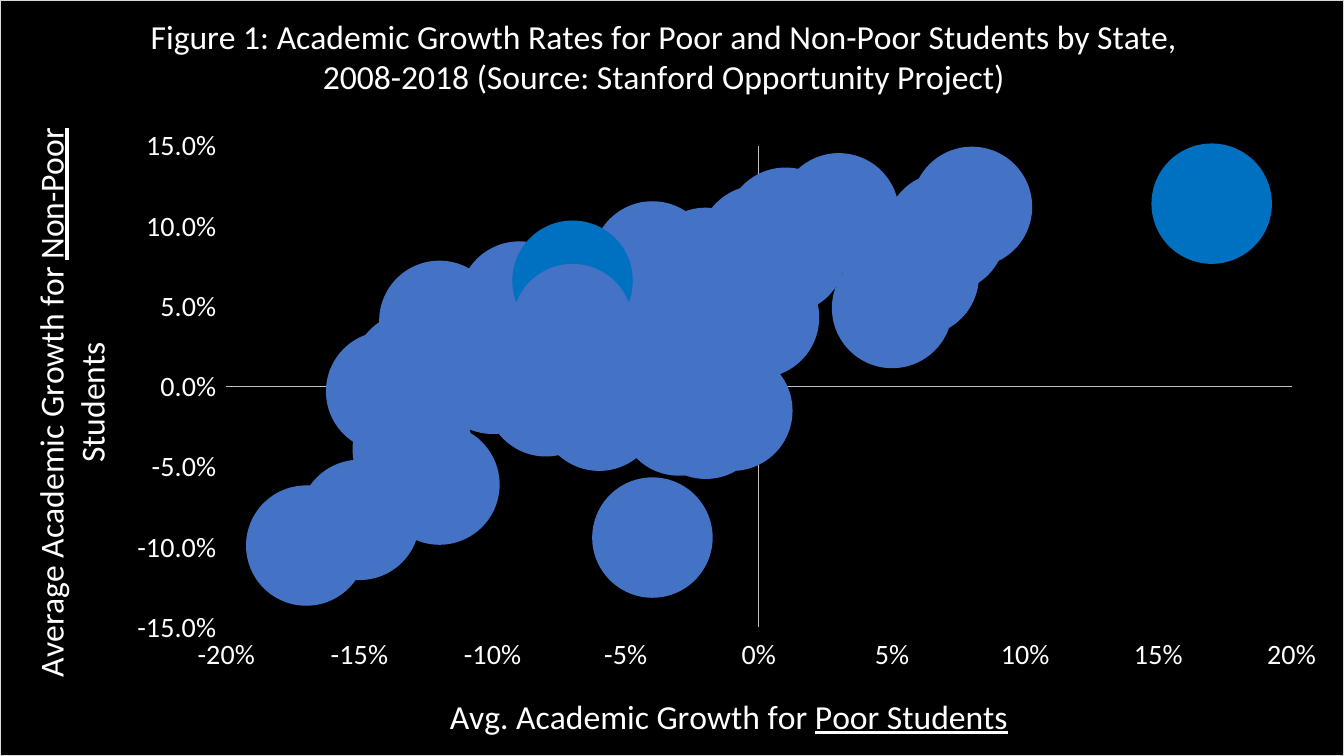
from lxml.etree import SubElement, fromstring
from pptx import Presentation
from pptx.chart.data import BubbleChartData
from pptx.dml.color import RGBColor
from pptx.enum.chart import XL_CHART_TYPE, XL_TICK_LABEL_POSITION, XL_TICK_MARK
from pptx.oxml.ns import nsdecls, qn
from pptx.util import Pt

COLORS = {"back": "000000", "text": "FFFFFF", "axis": "BFBFBF",
          "edge": "D9D9D9", "state": "4472C4", "mark": "0070C0"}
WIDE, HIGH = 960, 540
MARKED = (2, 34)

# Growth of poor students, in percent, one per state
POOR = [-4, 8, 17, -12, 1, -8, -5, -17, -15, -4,
        -2, 1, 5, -4, -6, -9, -10, -6, -9, -14,
        -9, -1, -4, -4, -6, -1, -2, -2, -12, -4,
        -2, -9, -2, -12, -7, -7, 7, -7, -13, -3,
        1, -1, 0, 3, -2, -13, 1, -6, 0, 6]
# Growth of non-poor students, in percent, same order
OTHER = [-9.4, 11.2, 11.4, -6.1, 9.9, -0.6, 2.8, -9.9, -8.3, 7.8,
         -1.6, 8.3, 4.9, 6, 4.8, 1.6, 0.8, 0.2, 3.7, -0.3,
         3.2, 7.6, 4.9, 5.7, 2, 6, 7.4, 2.7, 3.1, 3.9,
         -2, 5.3, 6, 4.1, 6.6, 2.8, 9.6, 3.9, 0.9, -1.8,
         8.3, -1.5, 4.3, 10.8, 6.6, -3.9, 9.1, -1.5, 8.8, 6.9]


def place(owner, **spots):
    """Fix the layout of a title or plot area, in points on the slide."""
    layout = owner.find(qn("c:layout"))
    if layout is None:
        layout = fromstring(f"<c:layout {nsdecls('c')}/>")
        owner.insert(0, layout)
    manual = SubElement(layout, qn("c:manualLayout"))
    if "w" in spots:
        SubElement(manual, qn("c:layoutTarget")).set("val", "inner")
    for key in ("x", "y"):
        SubElement(manual, qn(f"c:{key}Mode")).set("val", "edge")
    for key, spot in spots.items():
        full = WIDE if key in "xw" else HIGH
        SubElement(manual, qn(f"c:{key}")).set("val", str(round(spot / full, 4)))


def label(title, plain, lined, x, y):
    """Write a title from a plain part and further (text, underline) parts."""
    para = title.text_frame.paragraphs[0]
    for text, under in ((plain, False), *lined):
        run = para.add_run()
        run.text = text
        run.font.size = Pt(24)
        run.font.bold = False
        run.font.underline = under
        run.font.color.rgb = RGBColor.from_string(COLORS["text"])
    place(title._element, x=x, y=y)


deck = Presentation()
deck.slide_width, deck.slide_height = Pt(WIDE), Pt(HIGH)
slide = deck.slides.add_slide(deck.slide_layouts[6])

data = BubbleChartData()
states = data.add_series("Series 1")
for poor, other in zip(POOR, OTHER):
    states.add_data_point(poor / 100, round(other / 100, 3), 1)
chart = slide.shapes.add_chart(XL_CHART_TYPE.BUBBLE, 0, 0, Pt(WIDE), Pt(HIGH), data).chart
chart.has_legend = False
chart.font.name = "Calibri"
chart.font.size = Pt(10)

# Black ground with a thin edge
space = chart._chartSpace
space.find(qn("c:txPr")).addprevious(fromstring(
    f'<c:spPr {nsdecls("c", "a")}>'
    f'<a:solidFill><a:srgbClr val="{COLORS["back"]}"/></a:solidFill>'
    f'<a:ln w="9525"><a:solidFill><a:srgbClr val="{COLORS["edge"]}"/></a:solidFill></a:ln>'
    '</c:spPr>'))
place(space.find(qn("c:chart")).find(qn("c:plotArea")), x=161.5, y=104, w=761.5, h=344.5)

# Bubbles
plot = chart.plots[0]
plot._element.find(qn("c:varyColors")).set("val", "0")
plot.bubble_scale = 100
series = plot.series[0]
fills = [(series, "state")] + [(series.points[i], "mark") for i in MARKED]
for part, color in fills:
    part.format.fill.solid()
    part.format.fill.fore_color.rgb = RGBColor.from_string(COLORS[color])
    part.format.line.fill.background()

# Axes cross at zero, with labels at the low end
for axis, limit, form in ((chart.category_axis, 0.2, "0%"),
                          (chart.value_axis, 0.15, "0.0%")):
    axis.minimum_scale, axis.maximum_scale = -limit, limit
    axis.major_unit = 0.05
    axis.has_major_gridlines = False
    axis.major_tick_mark = axis.minor_tick_mark = XL_TICK_MARK.NONE
    axis.tick_label_position = XL_TICK_LABEL_POSITION.LOW
    axis.format.line.width = Pt(0.75)
    axis.format.line.color.rgb = RGBColor.from_string(COLORS["axis"])
    ticks = axis.tick_labels
    ticks.number_format = form
    ticks.number_format_is_linked = False
    ticks.font.name = "Calibri"
    ticks.font.size = Pt(20)
    ticks.font.color.rgb = RGBColor.from_string(COLORS["text"])

# Titles
chart.has_title = True
label(chart.chart_title, "Figure 1: Academic Growth Rates for Poor and Non-Poor Students "
      "by State, 2008-2018 (Source: Stanford Opportunity Project)", (), 103, 5)
label(chart.category_axis.axis_title, "Avg. Academic Growth for ",
      [("Poor Students", True)], 319, 495)
label(chart.value_axis.axis_title, "Average Academic Growth for ",
      [("Non-Poor", True), (" Students", False)], 19, 89)
turn = chart.value_axis.axis_title.text_frame._txBody.bodyPr
turn.set("rot", "-5400000")
turn.set("vert", "horz")

deck.save("out.pptx")
